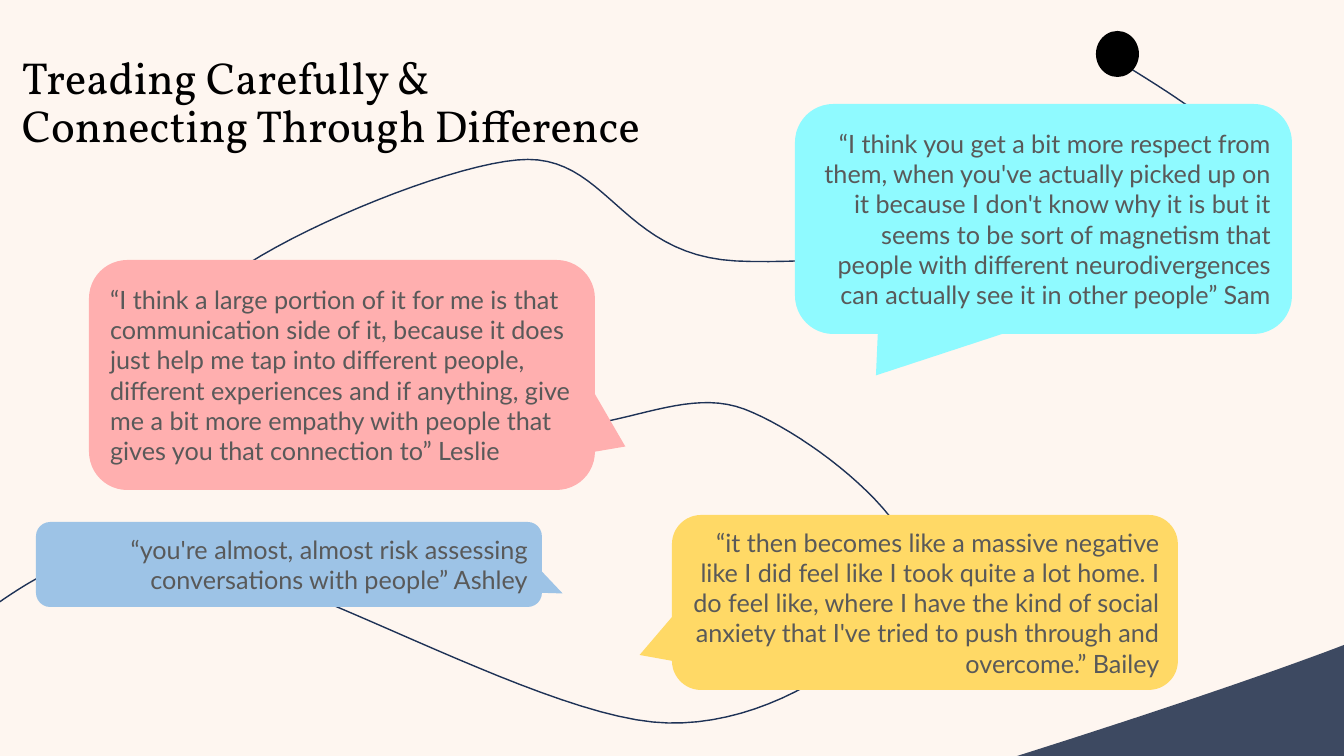
from pptx import Presentation
from pptx.dml.color import RGBColor
from pptx.enum.shapes import MSO_SHAPE
from pptx.enum.text import MSO_ANCHOR, PP_ALIGN
from pptx.util import Pt

CALLOUT = MSO_SHAPE.ROUNDED_RECTANGULAR_CALLOUT
OVAL = MSO_SHAPE.OVAL
MIDDLE = MSO_ANCHOR.MIDDLE
LEFT, RIGHT = PP_ALIGN.LEFT, PP_ALIGN.RIGHT
PX = 12192000 / 1344
CURVE_STEPS = 24

deck = Presentation()
deck.slide_width, deck.slide_height = round(1344 * PX), round(756 * PX)
page = deck.slides.add_slide(deck.slide_layouts[6])


def color(value):
    return RGBColor.from_string(value)


def add_curve(start, segments, corners=(), close=False):
    """Draw cubic Bezier segments as short lines, then straight lines to the corners."""
    points = []
    here = start
    for first, second, end in segments:
        for step in range(1, CURVE_STEPS + 1):
            t = step / CURVE_STEPS
            weights = ((1 - t) ** 3, 3 * t * (1 - t) ** 2, 3 * t * t * (1 - t), t ** 3)
            knots = (here, first, second, end)
            points.append([PX * sum(w * knot[axis] for w, knot in zip(weights, knots))
                           for axis in (0, 1)])
        here = end
    points += [(x * PX, y * PX) for x, y in corners]
    builder = page.shapes.build_freeform(start[0] * PX, start[1] * PX)
    builder.add_line_segments(points, close=close)
    shape = builder.convert_to_shape()
    shape.shadow.inherit = False
    return shape


page.background.fill.solid()
page.background.fill.fore_color.rgb = color("FEF6F0")

# Winding path behind the quotes
trail = add_curve((-2, 603), [
    ((44, 572), (90, 540), (202, 560)),
    ((313, 580), (550, 721), (668, 723)),
    ((787, 726), (901, 630), (913, 578)),
    ((926, 525), (810, 434), (744, 409)),
    ((677, 384), (605, 442), (514, 425)),
    ((422, 409), (198, 358), (199, 313)),
    ((199, 269), (427, 168), (517, 160)),
    ((607, 151), (619, 255), (736, 261)),
    ((853, 267), (1156, 229), (1220, 196)),
    ((1282, 161), (1199, 111), (1115, 59)),
])
trail.fill.background()
trail.line.color.rgb = color("1E3256")
trail.line.width = Pt(1)

# Title
title = page.shapes.add_textbox(*(round(n * PX) for n in (12, 31, 660, 146)))
title.text_frame.word_wrap = True
title.text_frame.vertical_anchor = MIDDLE
para = title.text_frame.paragraphs[0]
para.text = "Treading Carefully & Connecting Through Difference"
para.line_spacing = 0.9
para.font.name, para.font.size = "Vollkorn", Pt(32)
para.font.color.rgb = color("000000")

# Corner wedge
corner = add_curve((1344, 645), [((1344, 645), (1245, 684), (1014, 757))],
                   corners=[(1344, 757)], close=True)
corner.fill.solid()
corner.fill.fore_color.rgb = color("3D4961")
corner.line.fill.background()

# Speech bubbles: place, pointer tip, fill, alignment, quote
quotes = [
    ((89, 260, 506, 230), (0.56, 0.311), "FFAFAF", LEFT,
     "“I think a large portion of it for me is that communication side of it, because it "
     "does just help me tap into different people, different experiences and if anything, "
     "give me a bit more empathy with people that gives you that connection to” Leslie"),
    ((795, 104, 497, 230), (-0.337, 0.68), "8FFAFF", RIGHT,
     "“I think you get a bit more respect from them, when you've actually picked up on it "
     "because I don't know why it is but it seems to be sort of magnetism that people with "
     "different neurodivergences can actually see it in other people” Sam"),
    ((36, 522, 506, 85), (0.541, 0.341), "9DC3E6", RIGHT,
     "“you're almost, almost risk assessing conversations with people” Ashley"),
    ((672, 515, 506, 175), (-0.564, 0.3), "FFD966", RIGHT,
     "“it then becomes like a massive negative like I did feel like I took quite a lot home. "
     "I do feel like, where I have the kind of social anxiety that I've tried to push "
     "through and overcome.” Bailey"),
]
for place, tip, fill, align, quote in quotes:
    bubble = page.shapes.add_shape(CALLOUT, *(round(n * PX) for n in place))
    bubble.adjustments[0], bubble.adjustments[1] = tip
    bubble.shadow.inherit = False
    bubble.fill.solid()
    bubble.fill.fore_color.rgb = color(fill)
    bubble.line.fill.background()
    bubble.text_frame.word_wrap = True
    bubble.text_frame.vertical_anchor = MIDDLE
    para = bubble.text_frame.paragraphs[0]
    para.text = quote
    para.alignment = align
    para.font.name, para.font.size = "Lato", Pt(18)
    para.font.color.rgb = color("595959")

# Dot at the end of the path
dot = page.shapes.add_shape(OVAL, *(round(n * PX) for n in (1096, 31, 43, 46)))
dot.shadow.inherit = False
dot.fill.solid()
dot.fill.fore_color.rgb = color("000000")
dot.line.fill.background()

deck.save("out.pptx")
